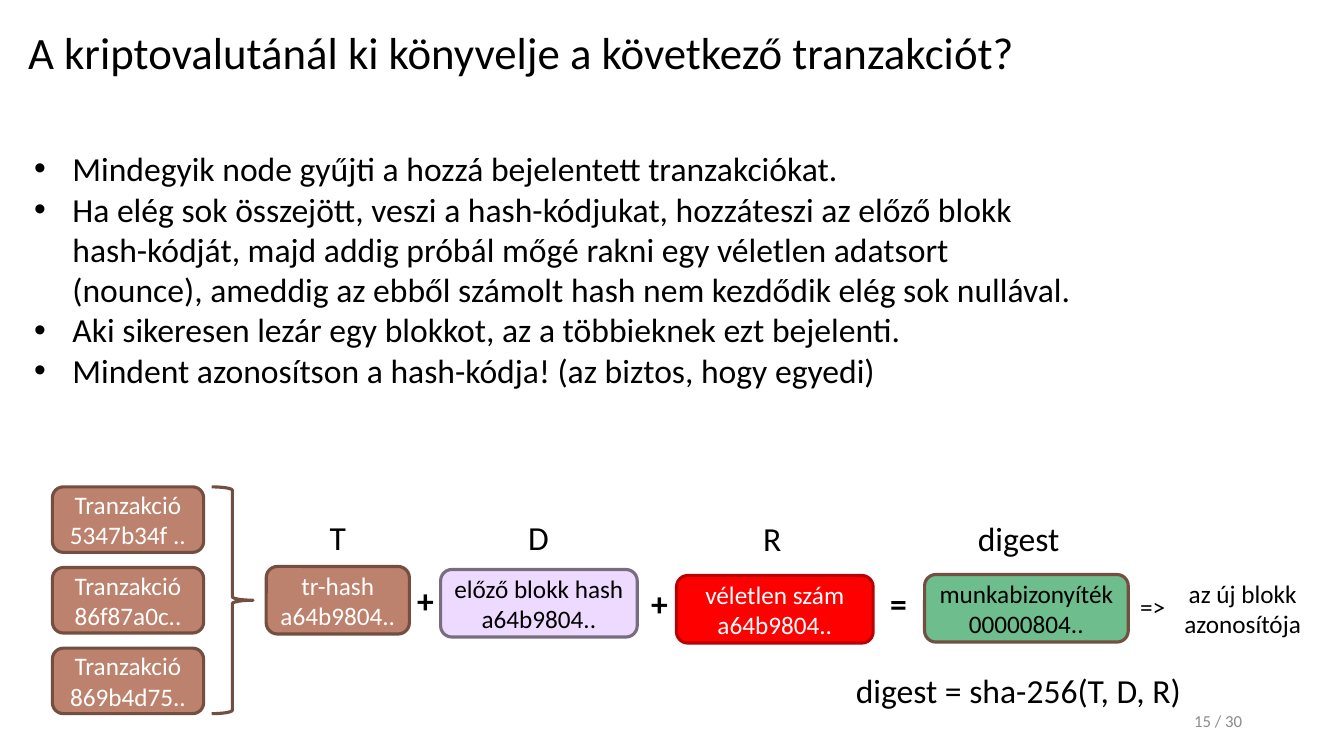
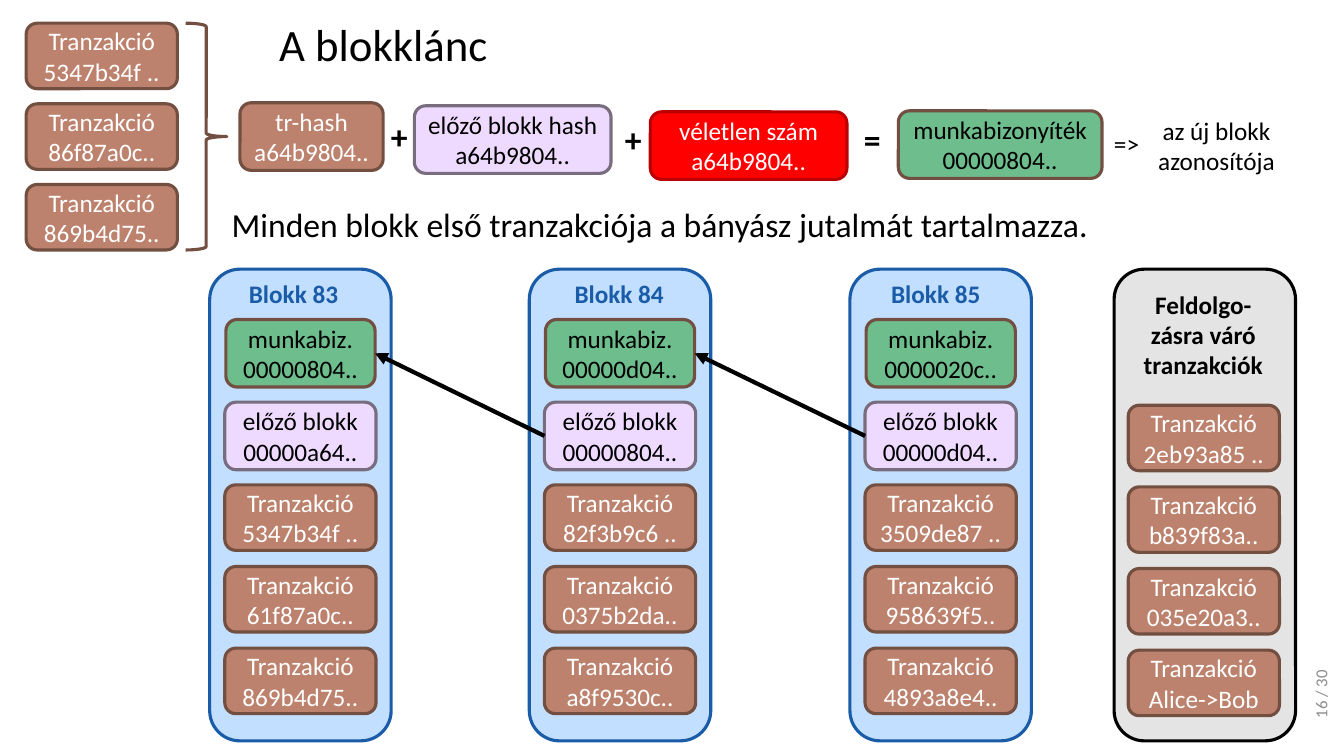
from dataclasses import dataclass

from lxml import etree
from pptx import Presentation
from pptx.dml.color import RGBColor
from pptx.enum.shapes import MSO_CONNECTOR, MSO_SHAPE
from pptx.enum.text import MSO_ANCHOR, MSO_AUTO_SIZE, PP_ALIGN
from pptx.oxml.ns import qn
from pptx.shapes.autoshape import Shape
from pptx.slide import Slide
from pptx.util import Inches, Pt

ROUNDED = MSO_SHAPE.ROUNDED_RECTANGLE
BRACE = MSO_SHAPE.RIGHT_BRACE
STRAIGHT = MSO_CONNECTOR.STRAIGHT
LEFT, CENTER, RIGHT = PP_ALIGN.LEFT, PP_ALIGN.CENTER, PP_ALIGN.RIGHT
TOP, MIDDLE = MSO_ANCHOR.TOP, MSO_ANCHOR.MIDDLE
GROW = MSO_AUTO_SIZE.SHAPE_TO_FIT_TEXT
LEFT_SIDE, RIGHT_SIDE = 1, 3

FONT = "Calibri"
BLACK = RGBColor(0x00, 0x00, 0x00)
WHITE = RGBColor(0xFF, 0xFF, 0xFF)
GRAY = RGBColor(0x8C, 0x8C, 0x8C)
CLAY = RGBColor(0xBD, 0x82, 0x6D)
BROWN = RGBColor(0x73, 0x4F, 0x42)
LILAC = RGBColor(0xEF, 0xDA, 0xFF)
PLUM = RGBColor(0x77, 0x6D, 0x7F)
RED = RGBColor(0xFF, 0x00, 0x00)
DARK_RED = RGBColor(0xBB, 0x00, 0x03)
GREEN = RGBColor(0x6D, 0xBD, 0x8D)
SKY = RGBColor(0xC2, 0xDF, 0xFF)
BLUE = RGBColor(0x1A, 0x5C, 0xA8)
SILVER = RGBColor(0xE4, 0xE4, 0xE4)

CARD_WIDTH = 1.5
TRANSACTION_HEIGHT = 0.65
HASH_HEIGHT = 0.67
CHAIN_PITCH = 0.8
BLOCK_PITCH = 0.81
COLUMN_TOP, COLUMN_WIDTH, COLUMN_HEIGHT = 2.67, 1.8, 4.68


@dataclass(frozen=True)
class Style:
    fill: RGBColor
    line: RGBColor
    text: RGBColor


@dataclass(frozen=True)
class HashCard:
    left: float
    top: float
    width: float
    title: str
    digest: str
    style: Style


@dataclass(frozen=True)
class Label:
    left: float
    top: float
    width: float
    text: str


@dataclass(frozen=True)
class Block:
    left: float
    label_left: float
    title: str
    proof: str
    previous: str
    transactions: tuple[str, ...]


TRANSACTION = Style(CLAY, BROWN, WHITE)
PREVIOUS = Style(LILAC, PLUM, BLACK)
RANDOM = Style(RED, DARK_RED, WHITE)
PROOF = Style(GREEN, BROWN, BLACK)
BLOCK = Style(SKY, BLUE, BLUE)
WAITING = Style(SILVER, BLACK, BLACK)

CHAIN_TRANSACTIONS = ("5347b34f ..", "86f87a0c..", "869b4d75..")
CHAIN_CARDS = (
    HashCard(2.12, 0.79, 1.42, "tr-hash", "a64b9804..", TRANSACTION),
    HashCard(3.85, 0.82, 1.95, "előző blokk hash", "a64b9804..", PREVIOUS),
    HashCard(6.19, 0.88, 1.95, "véletlen szám", "a64b9804..", RANDOM),
    HashCard(8.65, 0.87, 2.02, "munkabizonyíték", "00000804..", PROOF),
)
OPERATORS = (
    Label(3.52, 0.87, 0.37, "+"),
    Label(5.84, 0.9, 0.37, "+"),
    Label(8.21, 0.9, 0.37, "="),
)
PART_NAMES = (
    Label(3.17, 5.08, 0.37, "T"),
    Label(5.14, 5.08, 0.41, "D"),
    Label(7.47, 5.09, 0.38, "R"),
    Label(9.6, 5.09, 1.02, "digest"),
    Label(8.39, 6.6, 3.46, "digest = sha-256(T, D, R)"),
)
RULES = (
    "Mindegyik node gyűjti a hozzá bejelentett tranzakciókat.",
    "Ha elég sok összejött, veszi a hash-kódjukat, hozzáteszi az előző blokk "
    "hash-kódját, majd addig próbál mőgé rakni egy véletlen adatsort (nounce), "
    "ameddig az ebből számolt hash nem kezdődik elég sok nullával.",
    "Aki sikeresen lezár egy blokkot, az a többieknek ezt bejelenti.",
    "Mindent azonosítson a hash-kódja! (az biztos, hogy egyedi)",
)
BLOCKS = (
    Block(2.08, 2.37, "Blokk 83", "00000804..", "00000a64..",
          ("5347b34f ..", "61f87a0c..", "869b4d75..")),
    Block(5.25, 5.6, "Blokk 84", "00000d04..", "00000804..",
          ("82f3b9c6 ..", "0375b2da..", "a8f9530c..")),
    Block(8.43, 8.74, "Blokk 85", "0000020c..", "00000d04..",
          ("3509de87 ..", "958639f5..", "4893a8e4..")),
)
WAITING_TRANSACTIONS = ("2eb93a85 ..", "b839f83a..", "035e20a3..", "Alice->Bob")


def write(shape: Shape, lines: tuple[str, ...], size: float, color: RGBColor,
          align: PP_ALIGN, bold: bool = False) -> None:
    frame = shape.text_frame
    frame.text = "\n".join(lines)
    for paragraph in frame.paragraphs:
        paragraph.alignment = align
        font = paragraph.font
        font.name, font.size, font.bold = FONT, Pt(size), bold
        font.color.rgb = color


def add_text(slide: Slide, left: float, top: float, width: float, height: float,
             *lines: str, size: float = 24, color: RGBColor = BLACK,
             align: PP_ALIGN = LEFT, bold: bool = False, wrap: bool = True) -> Shape:
    box = slide.shapes.add_textbox(Inches(left), Inches(top), Inches(width), Inches(height))
    write(box, lines, size, color, align, bold)
    box.text_frame.word_wrap = wrap
    box.text_frame.auto_size = GROW
    return box


def add_label(slide: Slide, label: Label, bold: bool = False) -> None:
    add_text(slide, label.left, label.top, label.width, 0.5, label.text, bold=bold, wrap=False)


def add_title(slide: Slide, left: float, top: float, width: float, text: str) -> None:
    add_text(slide, left, top, width, 0.64, text, size=32)


def add_page_number(slide: Slide, left: float, top: float, width: float, text: str,
                    rotation: float = 0) -> None:
    number = add_text(slide, left, top, width, 0.4, text, size=12, color=GRAY, align=RIGHT)
    number.text_frame.auto_size = MSO_AUTO_SIZE.NONE
    number.text_frame.vertical_anchor = MIDDLE
    number.rotation = rotation


def add_outline(slide: Slide, kind: MSO_SHAPE, left: float, top: float, width: float,
                height: float, line: RGBColor) -> Shape:
    shape = slide.shapes.add_shape(kind, Inches(left), Inches(top), Inches(width), Inches(height))
    shape.shadow.inherit = False
    shape.fill.background()
    shape.line.color.rgb = line
    shape.line.width = Pt(2.25)
    return shape


def add_panel(slide: Slide, left: float, top: float, width: float, height: float,
              style: Style) -> Shape:
    panel = add_outline(slide, ROUNDED, left, top, width, height, style.line)
    panel.fill.solid()
    panel.fill.fore_color.rgb = style.fill
    return panel


def add_card(slide: Slide, left: float, top: float, width: float, height: float,
             title: str, digest: str, style: Style) -> Shape:
    card = add_panel(slide, left, top, width, height, style)
    write(card, (title, digest), 18, style.text, CENTER)
    card.text_frame.vertical_anchor = MIDDLE
    return card


def add_transactions(slide: Slide, left: float, top: float, pitch: float,
                     digests: tuple[str, ...]) -> None:
    for row, digest in enumerate(digests):
        add_card(slide, left, top + row * pitch, CARD_WIDTH, TRANSACTION_HEIGHT,
                 "Tranzakció", digest, TRANSACTION)


def add_hash_chain(slide: Slide, left: float, top: float) -> None:
    add_transactions(slide, left, top, CHAIN_PITCH, CHAIN_TRANSACTIONS)
    add_outline(slide, BRACE, left + 1.58, top, 0.41, 2.25, BROWN)
    for card in CHAIN_CARDS:
        add_card(slide, left + card.left, top + card.top, card.width, HASH_HEIGHT,
                 card.title, card.digest, card.style)
    for sign in OPERATORS:
        add_label(slide, Label(left + sign.left, top + sign.top, sign.width, sign.text), bold=True)
    add_text(slide, left + 11.06, top + 0.86, 1.49, 0.71, "az új blokk azonosítója",
             size=18, align=CENTER)
    add_text(slide, left + 10.69, top + 0.99, 0.45, 0.4, "=>", size=18, wrap=False)


def add_block(slide: Slide, block: Block) -> tuple[Shape, Shape]:
    add_panel(slide, block.left, COLUMN_TOP, COLUMN_WIDTH, COLUMN_HEIGHT, BLOCK)
    card_left = block.left + 0.15
    add_transactions(slide, card_left, 4.81, BLOCK_PITCH, block.transactions)
    previous = add_card(slide, card_left, 3.99, CARD_WIDTH, HASH_HEIGHT,
                        "előző blokk", block.previous, PREVIOUS)
    proof = add_card(slide, card_left + 0.01, 3.17, 1.48, HASH_HEIGHT,
                     "munkabiz.", block.proof, PROOF)
    add_text(slide, block.label_left, 2.71, 1.1, 0.4, block.title,
             size=18, color=BLOCK.text, bold=True, wrap=False)
    return previous, proof


def add_arrow(slide: Slide, previous: Shape, proof: Shape) -> None:
    arrow = slide.shapes.add_connector(STRAIGHT, 0, 0, 0, 0)
    arrow.begin_connect(previous, LEFT_SIDE)
    arrow.end_connect(proof, RIGHT_SIDE)
    arrow.line.color.rgb = BLACK
    arrow.line.width = Pt(3)
    etree.SubElement(arrow.line._get_or_add_ln(), qn("a:tailEnd"), type="triangle")
    etree.SubElement(arrow._element.spPr, qn("a:effectLst"))


def add_bullets(box: Shape) -> None:
    for paragraph in box.text_frame.paragraphs:
        properties = paragraph._p.get_or_add_pPr()
        properties.set("marL", str(Inches(0.38)))
        properties.set("indent", str(-Inches(0.38)))
        bullet_font = etree.Element(qn("a:buFont"), typeface="Arial")
        bullet = etree.Element(qn("a:buChar"), char="•")
        properties.insert(0, bullet_font)
        properties.insert(1, bullet)


def build_bookkeeping(slide: Slide) -> None:
    add_title(slide, 0.18, 0.2, 11.98, "A kriptovalutánál ki könyvelje a következő tranzakciót?")
    add_page_number(slide, 9.42, 6.95, 3, "15 / 30")
    add_bullets(add_text(slide, 0.24, 1.42, 10.57, 2.52, *RULES))
    add_hash_chain(slide, 0.52, 4.83)
    for name in PART_NAMES:
        add_label(slide, name)


def build_blockchain(slide: Slide) -> None:
    add_title(slide, 2.67, 0.12, 6.6, "A blokklánc")
    add_page_number(slide, 12.67, 6.78, 0.86, "16 / 30", rotation=270)
    add_hash_chain(slide, 0.26, 0.23)
    links = [add_block(slide, block) for block in BLOCKS]
    for (_, proof), (previous, _) in zip(links, links[1:]):
        add_arrow(slide, previous, proof)
    add_label(slide, Label(2.2, 1.97, 8.77,
                           "Minden blokk első tranzakciója a bányász jutalmát tartalmazza."))
    add_panel(slide, 11.05, COLUMN_TOP, COLUMN_WIDTH, COLUMN_HEIGHT, WAITING)
    add_text(slide, 11.2, 2.82, 1.47, 1.01, "Feldolgo-zásra váró tranzakciók",
             size=18, align=CENTER, bold=True)
    add_transactions(slide, 11.19, 4.02, BLOCK_PITCH, WAITING_TRANSACTIONS)


def main() -> None:
    deck = Presentation()
    deck.slide_width, deck.slide_height = Inches(13.33), Inches(7.5)
    blank = deck.slide_layouts[6]
    for build in (build_bookkeeping, build_blockchain):
        build(deck.slides.add_slide(blank))
    deck.save("out.pptx")


if __name__ == "__main__":
    main()
